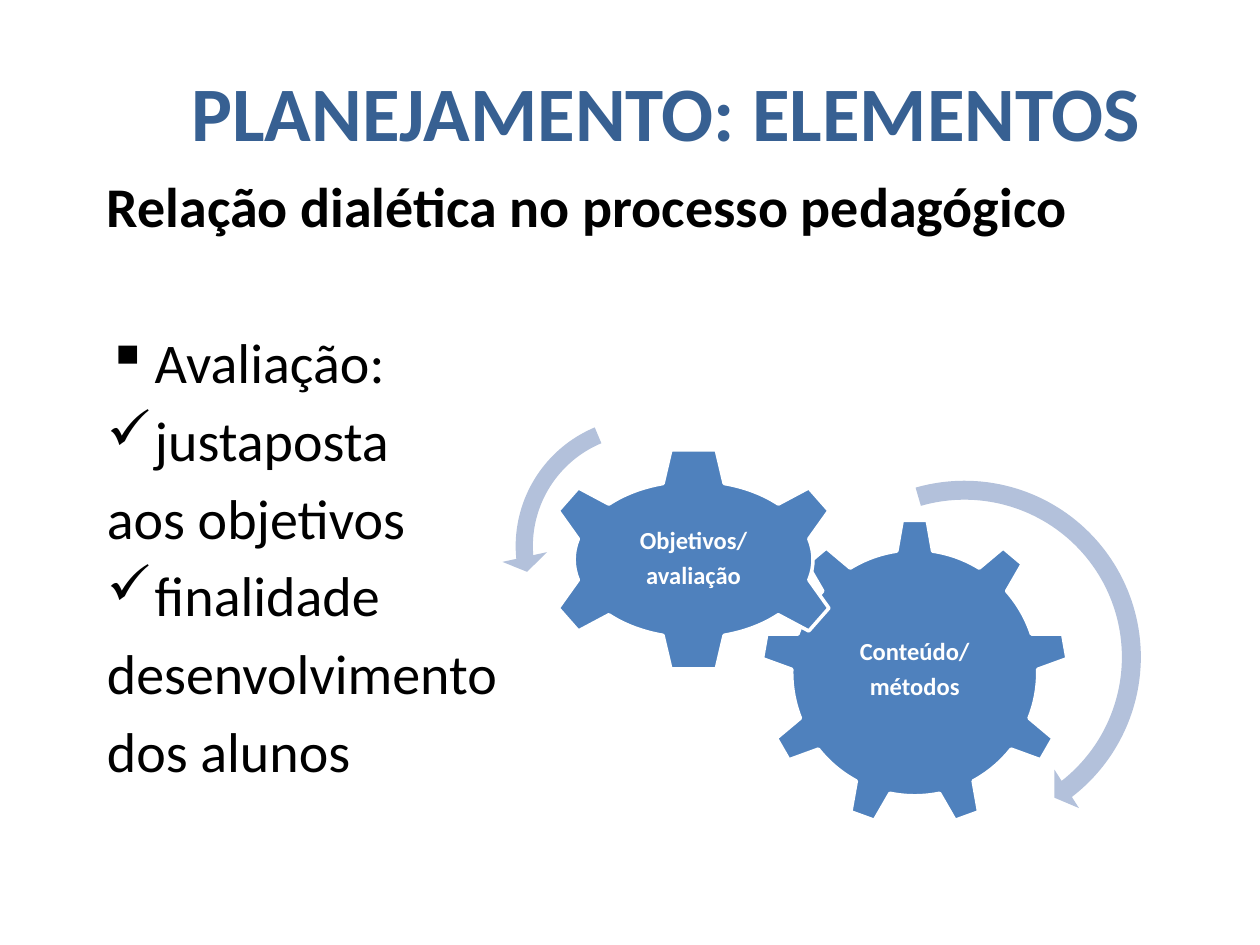
from dataclasses import dataclass

from lxml import etree
from pptx import Presentation
from pptx import util as u
from pptx.dml import color
from pptx.enum import shapes, text
from pptx.oxml import ns


@dataclass(frozen=True)
class Theme:
    """Colours, font and type sizes of the slide."""
    font: str = "Calibri"
    title: str = "376092"
    body: str = "000000"
    gear: str = "4F81BD"
    arrow: str = "B3C1DB"
    light: str = "FFFFFF"
    title_size: int = 44
    body_size: int = 32
    label_size: int = 14


THEME = Theme()
SQUARE, CHECK = "▪", "✓"
HEADING = "Relação dialética no processo pedagógico"
POINTS = [
    (SQUARE, "Avaliação:"),
    (CHECK, "justaposta"),
    (None, "aos objetivos"),
    (CHECK, "finalidade"),
    (None, "desenvolvimento"),
    (None, "dos alunos"),
]


def inches(*values):
    """Convert numbers to lengths."""
    return [u.Inches(value) for value in values]


def rgb(value):
    """Convert a hex string to a colour."""
    return color.RGBColor.from_string(value)


def style(paragraph, size, colour, bold=True):
    """Set the font of a whole paragraph."""
    font = paragraph.font
    font.name, font.size, font.bold = THEME.font, u.Pt(size), bold
    font.color.rgb = rgb(colour)


def add_bullet(paragraph, character):
    """Give a paragraph a hanging bullet."""
    properties = paragraph._p.get_or_add_pPr()
    indent = u.Inches(0.38)
    properties.set("marL", str(indent))
    properties.set("indent", str(-indent))
    etree.SubElement(properties, ns.qn("a:buChar"), char=character)


def place_title(slide, left, top, width, height):
    """Move and format the title placeholder."""
    title = slide.shapes.title
    title.left, title.top, title.width, title.height = inches(left, top, width, height)
    frame = title.text_frame
    frame.text = "PLANEJAMENTO: ELEMENTOS"
    frame.vertical_anchor = text.MSO_ANCHOR.MIDDLE
    paragraph = frame.paragraphs[0]
    paragraph.alignment = text.PP_ALIGN.CENTER
    style(paragraph, THEME.title_size, THEME.title)


def add_body(slide, left, top, width, height):
    """Add the heading and the list of points."""
    frame = slide.shapes.add_textbox(*inches(left, top, width, height)).text_frame
    frame.word_wrap = True
    heading = frame.paragraphs[0]
    heading.text = HEADING
    style(heading, THEME.body_size, THEME.body)
    for index, (bullet, words) in enumerate(POINTS):
        paragraph = frame.add_paragraph()
        paragraph.text = words
        paragraph.space_before = u.Pt(6 if index else 51)
        if bullet:
            add_bullet(paragraph, bullet)
        style(paragraph, THEME.body_size, THEME.body, bold=False)


def add_filled_shape(slide, kind, box, fill):
    """Add a preset shape with a flat fill and no outline."""
    shape = slide.shapes.add_shape(kind, *inches(*box))
    shape.shadow.inherit = False
    shape.fill.solid()
    shape.fill.fore_color.rgb = rgb(fill)
    shape.line.fill.background()
    return shape


def add_gear(slide, kind, box, lines):
    """Add an outlined gear with a centred label."""
    gear = add_filled_shape(slide, kind, box, THEME.gear)
    gear.line.color.rgb = rgb(THEME.light)
    gear.line.width = u.Pt(2)
    frame = gear.text_frame
    frame.word_wrap = True
    frame.vertical_anchor = text.MSO_ANCHOR.MIDDLE
    frame.margin_left = frame.margin_right = u.Inches(0.02)
    frame.margin_top = frame.margin_bottom = u.Inches(0.02)
    frame.text = "\n".join(lines)
    for paragraph in frame.paragraphs:
        paragraph.alignment = text.PP_ALIGN.CENTER
        paragraph.line_spacing = 0.9
        paragraph.space_after = u.Pt(5)
        style(paragraph, THEME.label_size, THEME.light)


def add_arrow(slide, kind, box, adjustments):
    """Add a circular arrow with its own proportions."""
    arrow = add_filled_shape(slide, kind, box, THEME.arrow)
    for index, value in enumerate(adjustments):
        arrow.adjustments[index] = value


def add_gears(slide, left, top):
    """Add the two gears and the arrows that turn them."""
    kinds = shapes.MSO_SHAPE
    add_gear(slide, kinds.GEAR_9, (left + 2.06, top + 0.92, 2.44, 2.44),
             ["Conteúdo/", "métodos"])
    add_gear(slide, kinds.GEAR_6, (left + 0.31, top + 0.35, 2.43, 1.78),
             ["Objetivos/", "avaliação"])
    add_arrow(slide, kinds.CIRCULAR_ARROW, (left + 2.17, top + 0.51, 3.01, 3.01),
              [0.05, 3.13, 31.33, 152.34, 0.06])
    add_arrow(slide, kinds.LEFT_CIRCULAR_ARROW, (left, top, 2.27, 2.27),
              [0.06, 4.3, 104.89, 148.38, 0.08])


def main():
    """Build and save the presentation."""
    presentation = Presentation()
    presentation.slide_width, presentation.slide_height = inches(10, 7.5)
    slide = presentation.slides.add_slide(presentation.slide_layouts.get_by_name("Title Only"))
    place_title(slide, 0.83, 0.42, 8.92, 0.92)
    add_body(slide, 0.75, 1.31, 9, 5.83)
    add_gears(slide, 3.98, 3.2)
    presentation.save("out.pptx")


if __name__ == "__main__":
    main()
